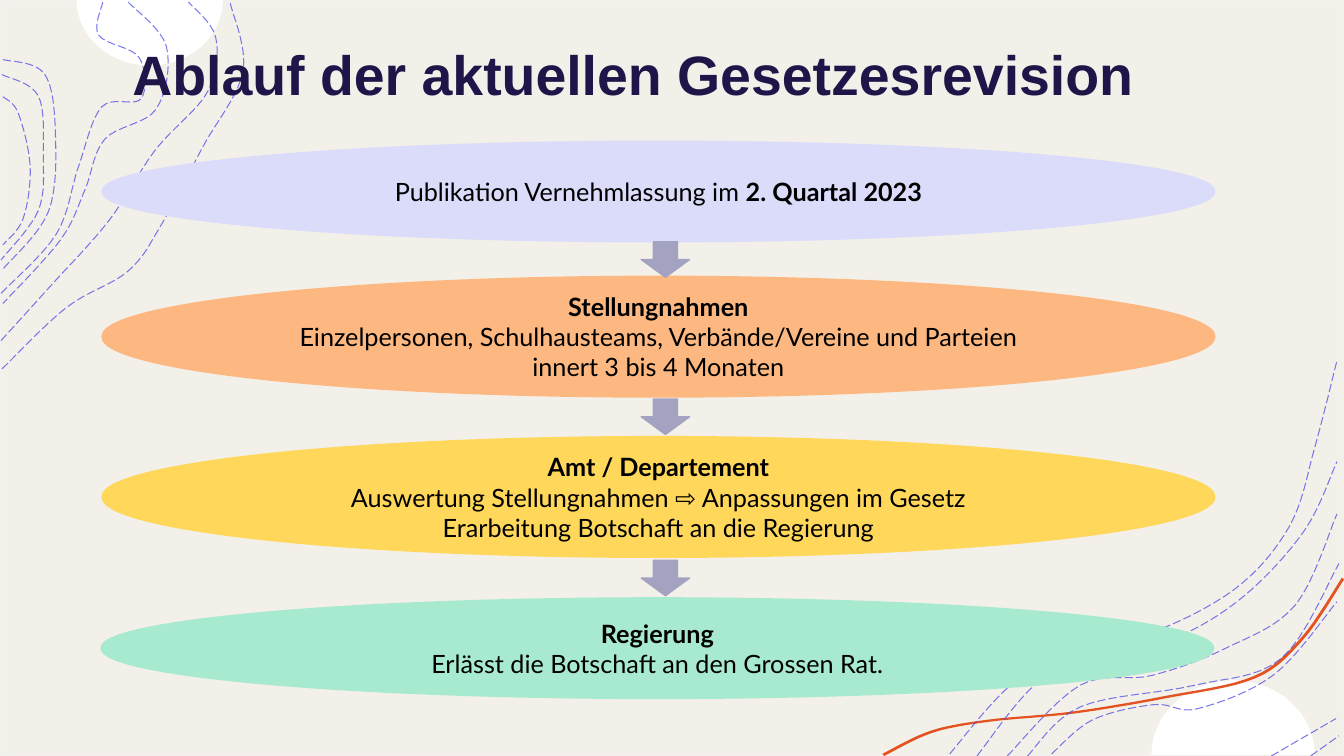
import math
from dataclasses import dataclass

import pptx
import pptx.dml.color
import pptx.enum.dml
import pptx.enum.shapes
import pptx.enum.text
import pptx.oxml
import pptx.oxml.ns
import pptx.util

Inches = pptx.util.Inches
Pt = pptx.util.Pt
RGBColor = pptx.dml.color.RGBColor
Kind = pptx.enum.shapes.MSO_SHAPE
Align = pptx.enum.text.PP_ALIGN
Middle = pptx.enum.text.MSO_ANCHOR.MIDDLE
Point = tuple[float, float]

SAND = RGBColor.from_string("F3F0E9")
PALE = RGBColor.from_string("F2F2F2")
WHITE = RGBColor.from_string("FFFFFF")
BLACK = RGBColor.from_string("000000")
NAVY = RGBColor.from_string("201449")
BLUE = RGBColor.from_string("4D4EE6")
RED = RGBColor.from_string("E45221")
LILAC = RGBColor.from_string("DBDCFA")
PEACH = RGBColor.from_string("FCB880")
GOLD = RGBColor.from_string("FFD85B")
MINT = RGBColor.from_string("A8EACF")
GREY = RGBColor.from_string("A3A3C1")
WIDTH, HEIGHT = 13.33, 7.5


@dataclass
class Span:
    text: str
    bold: bool = False


@dataclass
class Step:
    left: float
    top: float
    height: float
    color: RGBColor
    lines: list[list[Span]]


@dataclass
class Cap:
    mid: float
    edge: float
    half: float
    rise: float


STEPS = [
    Step(1.02, 1.41, 0.98, LILAC, [
        [Span("Publikation Vernehmlassung im "), Span("2. Quartal 2023", True)]]),
    Step(1.02, 2.75, 1.18, PEACH, [
        [Span("Stellungnahmen", True)],
        [Span("Einzelpersonen, Schulhausteams, Verbände/Vereine und Parteien innert 3 bis 4 Monaten")]]),
    Step(1.02, 4.34, 1.18, GOLD, [
        [Span("Amt / Departement", True)],
        [Span("Auswertung Stellungnahmen ⇨ Anpassungen im Gesetz")],
        [Span("Erarbeitung Botschaft an die Regierung")]]),
    Step(1.01, 5.94, 0.98, MINT, [
        [Span("Regierung", True)],
        [Span("Erlässt die Botschaft an den Grossen Rat.")]]),
]
ARROWS = [2.4, 3.96, 5.56]
CAPS = [Cap(1.485, 0, 0.725, 0.65), Cap(12.23, 7.49, 0.81, -0.74)]

BAND = [(13.33, 5.75), (12.93, 6.34), (12.45, 6.73), (11.55, 6.93),
        (10.65, 7.08), (9.82, 7.16), (9.25, 7.27), (8.77, 7.5)]

WAVES = [
    [(0.02, 3.66), (0.66, 3.05), (1.27, 2.69), (1.6, 2.23), (2.01, 1.46), (2.41, 0.71), (2.28, 0.02)],
    [(0.01, 3.38), (0.5, 2.84), (1.08, 2.19), (1.54, 1.49), (2.06, 0.91), (2.14, 0.37), (1.87, 0.02)],
    [(1.27, 0.02), (1.65, 0.46), (1.55, 1.08), (1.04, 1.38), (0.84, 1.89), (0.6, 2.38), (0.03, 3.01)],
    [(0.01, 2.91), (0.56, 2.32), (0.78, 1.65), (1.01, 1.06), (1.4, 0.98), (1.38, 0.57),
     (0.98, 0.35), (1.02, 0.02)],
    [(0.03, 0.59), (0.44, 0.73), (0.55, 1.32), (0.48, 2.1), (0.02, 2.68)],
    [(0.02, 0.74), (0.38, 0.95), (0.43, 1.55), (0.38, 2.09), (0.01, 2.58)],
    [(0.03, 0.96), (0.18, 1.12), (0.3, 1.65), (0.23, 2.17), (0.03, 2.43)],
    [(9.42, 7.48), (10.02, 6.8), (10.78, 6.3), (11.37, 6.29), (12.24, 5.85), (12.79, 5.22),
     (13.04, 4.44), (13.26, 3.58)],
    [(9.69, 7.5), (10.29, 6.77), (11.03, 6.38), (11.64, 6.33), (12.33, 5.92), (12.94, 5.26), (13.26, 4.58)],
    [(13, 7.5), (13.28, 7.3)],
    [(12.61, 7.5), (13.25, 7.13)],
    [(10.43, 7.48), (10.84, 7.14), (11.45, 6.99), (11.88, 7.03), (12.64, 6.69), (13.26, 5.97)],
    [(10.19, 7.5), (10.72, 7.01), (11.84, 6.8), (12.71, 6.53), (13.28, 5.59)],
    [(9.99, 7.5), (10.71, 6.8), (11.43, 6.7), (12.16, 6.43), (12.85, 6), (13.26, 5.1)],
]


def curve(knots: list[Point], parts: int = 8) -> list[Point]:
    ends = [knots[0], *knots, knots[-1]]
    out = [knots[0]]
    for a, b, c, d in zip(ends, ends[1:], ends[2:], ends[3:]):
        for i in range(1, parts + 1):
            t = i / parts
            x, y = (q + t * (r - p) / 2 + t * t * (2 * p - 5 * q + 4 * r - s) / 2
                    + t ** 3 * (3 * q - p - 3 * r + s) / 2
                    for p, q, r, s in zip(a, b, c, d))
            out.append((x, y))
    return out


def trace(slide, points: list[Point], close: bool):
    mils = [(round(x * 1000), round(y * 1000)) for x, y in points]
    pen = slide.shapes.build_freeform(*mils[0], scale=Inches(1) / 1000)
    pen.add_line_segments(mils[1:], close=close)
    shape = pen.convert_to_shape()
    shape.shadow.inherit = False
    return shape


def area(slide, points: list[Point], color: RGBColor) -> None:
    shape = trace(slide, points, True)
    shape.fill.solid()
    shape.fill.fore_color.rgb = color
    shape.line.fill.background()


def wave(slide, knots: list[Point]) -> None:
    shape = trace(slide, curve(knots), False)
    shape.fill.background()
    shape.line.color.rgb = BLUE
    shape.line.width = Pt(0.75)
    shape.line.dash_style = pptx.enum.dml.MSO_LINE.LONG_DASH
    tint = shape.element.find(".//" + pptx.oxml.ns.qn("a:ln")).find(".//" + pptx.oxml.ns.qn("a:srgbClr"))
    tint.append(pptx.oxml.parse_xml(f'<a:alpha {pptx.oxml.ns.nsdecls("a")} val="75000"/>'))


def solid(slide, kind: Kind, box: tuple[float, ...], fill: RGBColor, line: RGBColor, width: float):
    shape = slide.shapes.add_shape(kind, *map(Inches, box))
    shape.shadow.inherit = False
    shape.fill.solid()
    shape.fill.fore_color.rgb = fill
    shape.line.color.rgb = line
    shape.line.width = Pt(width)
    return shape


def style(para, name: str, size: float, color: RGBColor) -> None:
    para.alignment = Align.CENTER
    para.font.name = name
    para.font.size = Pt(size)
    para.font.color.rgb = color


def draw(slide, step: Step) -> None:
    box = (step.left, step.top, 11.02, step.height)
    frame = solid(slide, Kind.OVAL, box, step.color, step.color, 2.25).text_frame
    frame.word_wrap = True
    frame.vertical_anchor = Middle
    for i, line in enumerate(step.lines):
        para = frame.add_paragraph() if i else frame.paragraphs[0]
        style(para, "Lato", 18, BLACK)
        for span in line:
            run = para.add_run()
            run.text = span.text
            if len(line) > 1:
                run.font.bold = span.bold
            else:
                para.font.bold = span.bold


def head(slide) -> None:
    title = slide.shapes.title
    title.element.getparent().append(title.element)
    title.left, title.top, title.width, title.height = map(Inches, (0.76, 0, 10.74, 1.45))
    frame = title.text_frame
    frame.text = "Ablauf der aktuellen Gesetzesrevision"
    frame.vertical_anchor = Middle
    frame.margin_left = Inches(0.4)
    style(frame.paragraphs[0], "Arial", 39.6, NAVY)
    frame.paragraphs[0].font.bold = True


def main() -> None:
    deck = pptx.Presentation()
    deck.slide_width, deck.slide_height = Inches(WIDTH), Inches(HEIGHT)
    slide = deck.slides.add_slide(deck.slide_layouts[5])
    solid(slide, Kind.RECTANGLE, (0, 0, WIDTH, HEIGHT), SAND, PALE, 1)
    turns = [math.pi * i / 40 for i in range(41)]
    for cap in CAPS:
        area(slide, [(cap.mid + cap.half * math.cos(t), cap.edge + cap.rise * math.sin(t))
                     for t in turns], WHITE)
    low = curve(BAND)
    area(slide, low + [(x - 0.02, y - 0.02) for x, y in reversed(low)], RED)
    for knots in WAVES:
        wave(slide, knots)
    head(slide)
    for step in STEPS:
        draw(slide, step)
    for top in ARROWS:
        solid(slide, Kind.DOWN_ARROW, (6.36, top, 0.48, 0.35), GREY, GREY, 1)
    deck.save("out.pptx")


if __name__ == "__main__":
    main()
